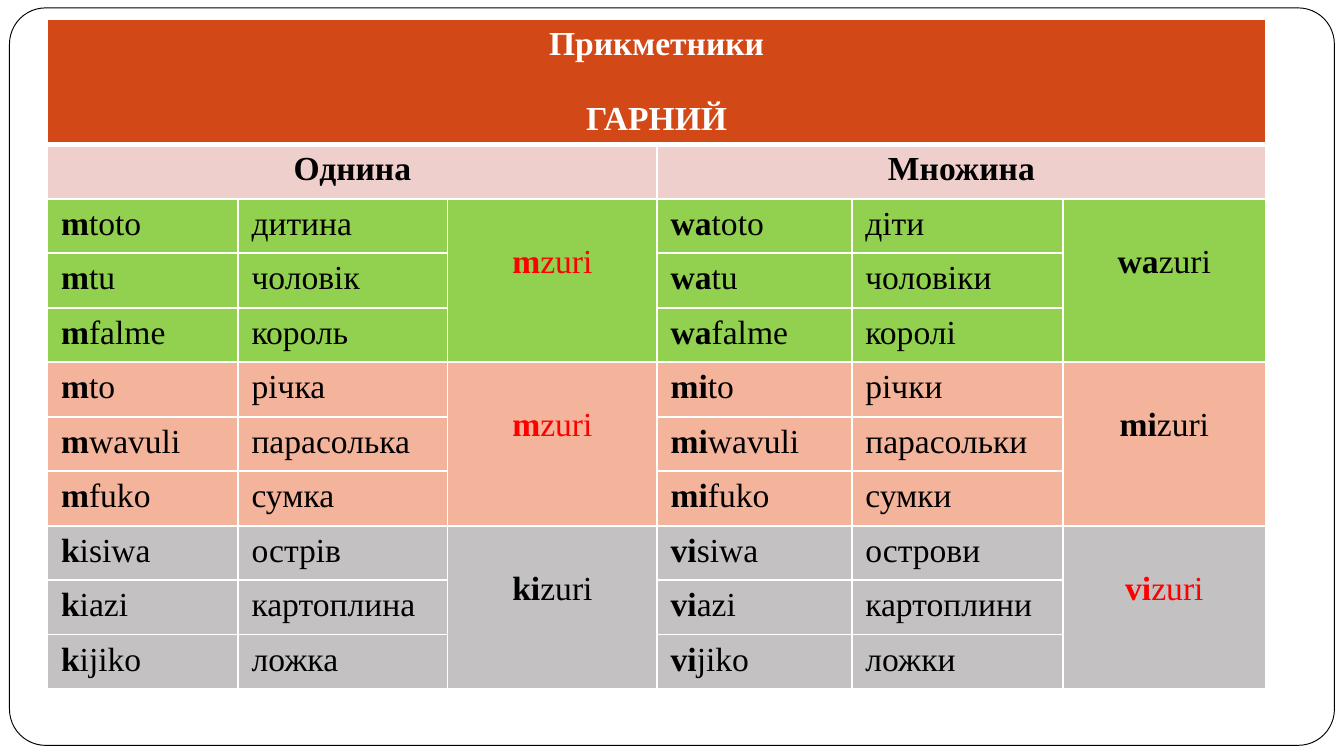
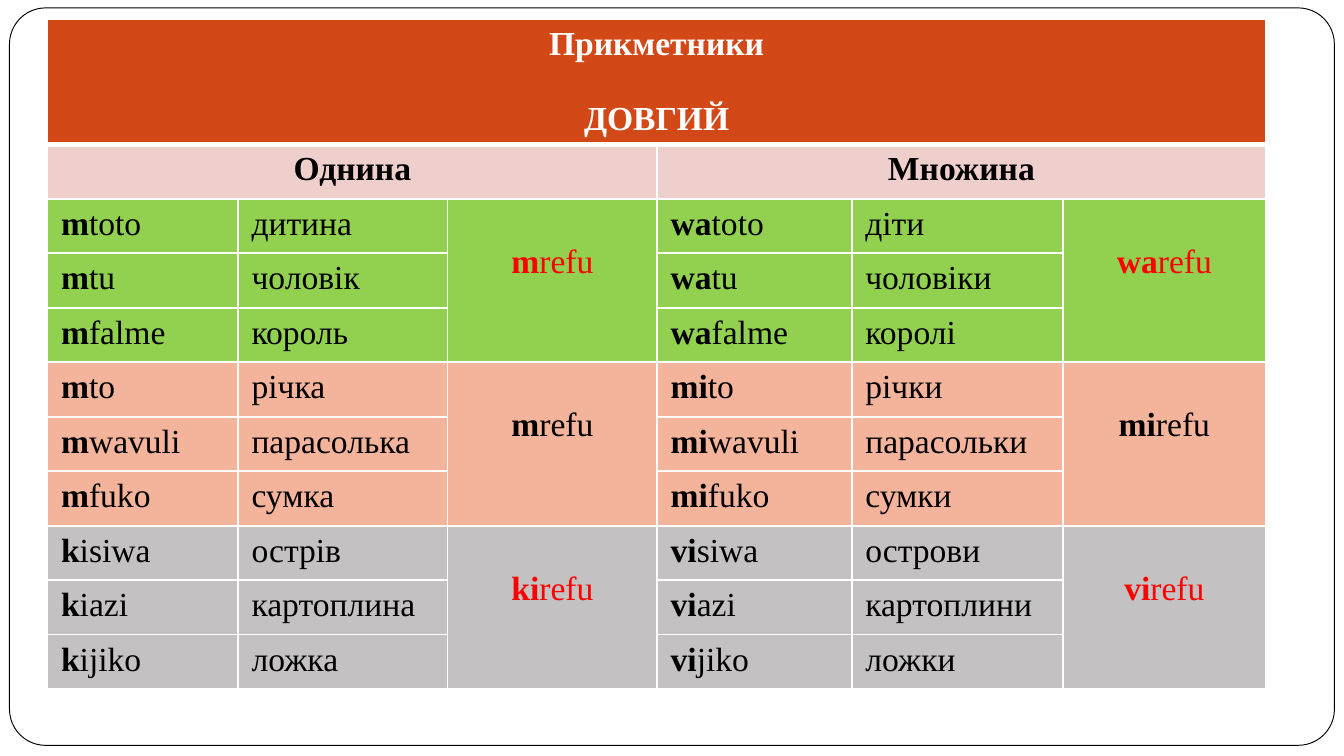
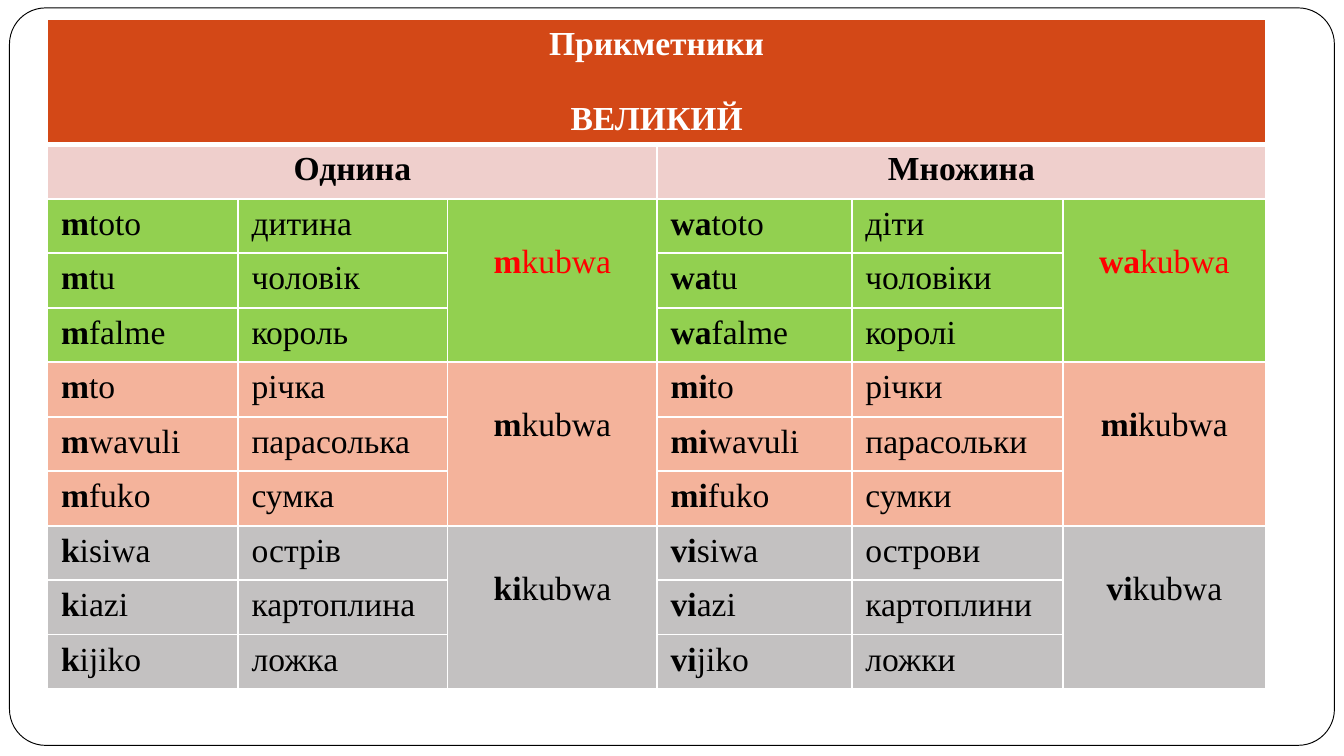
from lxml import etree
from pptx import Presentation
from pptx.dml.color import RGBColor
from pptx.enum.shapes import MSO_SHAPE
from pptx.enum.text import PP_ALIGN
from pptx.oxml.ns import qn
from pptx.util import Cm, Pt

FONT = "Times New Roman"
WHITE, BLACK, RED = "FFFFFF", "000000", "FF0000"
HEADING_FILL, NUMBER_FILL = "D34817", "EFCFCC"
COLUMN_WIDTHS = (3.6, 3.96, 3.96, 3.68, 3.99, 3.83)
ROW_HEIGHT = 1.03

# Noun classes: adjective prefixes, fill, and nouns with "|" after the prefix
NOUN_CLASSES = (
    (("m", "wa"), "92D050", (
        ("m|toto", "дитина", "wa|toto", "діти"),
        ("m|tu", "чоловік", "wa|tu", "чоловіки"),
        ("m|falme", "король", "wa|falme", "королі"),
    )),
    (("m", "mi"), "F4B39B", (
        ("m|to", "річка", "mi|to", "річки"),
        ("m|wavuli", "парасолька", "mi|wavuli", "парасольки"),
        ("m|fuko", "сумка", "mi|fuko", "сумки"),
    )),
    (("k" "i", "vi"), "C3C1C1", (
        ("k|isiwa", "острів", "vi|siwa", "острови"),
        ("k|iazi", "картоплина", "vi|azi", "картоплини"),
        ("k|ijiko", "ложка", "vi|jiko", "ложки"),
    )),
)

# Adjective, its stem, and the (class, number) forms shown in red
ADJECTIVES = (
    ("ГАРНИЙ", "zuri", {(0, 0), (1, 0), (2, 1)}),
    ("ДОВГИЙ", "refu", {(0, 0), (0, 1), (2, 0), (2, 1)}),
    ("ВЕЛИКИЙ", "kubwa", {(0, 0), (0, 1)}),
)


def rgb(hex_code):
    return RGBColor.from_string(hex_code)


def style_run(run, color, bold):
    run.font.name = FONT
    run.font.size = Pt(18)
    run.font.bold = bold
    run.font.color.rgb = rgb(color)


def write_heading(cell, text, color):
    """Bold centred lines, one empty line's height apart."""
    cell.text_frame.text = text
    for position, paragraph in enumerate(cell.text_frame.paragraphs):
        paragraph.alignment = PP_ALIGN.CENTER
        paragraph.space_before = Pt(20 if position else 0)
        for run in paragraph.runs:
            style_run(run, color, True)


def write_word(cell, word, color=BLACK):
    """A word whose prefix, marked off by "|", is bold."""
    prefix, _, stem = word.rpartition("|")
    paragraph = cell.text_frame.paragraphs[0]
    for part, bold in ((prefix, True), (stem, False)):
        if part:
            run = paragraph.add_run()
            run.text = part
            style_run(run, color, bold)


def write_adjective(cell, word, color):
    write_word(cell, word, color)
    cell.text_frame.paragraphs[0].alignment = PP_ALIGN.CENTER
    cell.margin_top = Cm(0.84)


def set_borders(cell, top=1, bottom=1):
    properties = cell._tc.get_or_add_tcPr()
    widths = (("lnL", 1), ("lnR", 1), ("lnT", top), ("lnB", bottom))
    for position, (side, width) in enumerate(widths):
        border = etree.Element(qn(f"a:{side}"), w=str(Pt(width)))
        fill = etree.SubElement(border, qn("a:solidFill"))
        etree.SubElement(fill, qn("a:srgbClr"), val=WHITE)
        properties.insert(position, border)


def fill_row(table, row, color, top=1, bottom=1):
    for column in range(len(COLUMN_WIDTHS)):
        cell = table.cell(row, column)
        cell.fill.solid()
        cell.fill.fore_color.rgb = rgb(color)
        set_borders(cell, top, bottom)


def add_frame(slide):
    frame = slide.shapes.add_shape(
        MSO_SHAPE.ROUNDED_RECTANGLE, Cm(0.18), Cm(0.15), Cm(25.04), Cm(13.94))
    frame.adjustments[0] = 0.049
    frame.shadow.inherit = False
    frame.fill.solid()
    frame.fill.fore_color.rgb = rgb(WHITE)
    frame.line.color.rgb = rgb(BLACK)
    frame.line.width = Pt(0.5)


def add_grid(slide):
    row_count = 2 + sum(len(nouns) for _, _, nouns in NOUN_CLASSES)
    holder = slide.shapes.add_table(
        row_count, len(COLUMN_WIDTHS), Cm(0.9), Cm(0.36),
        Cm(sum(COLUMN_WIDTHS)), Cm(ROW_HEIGHT * row_count))
    table = holder.table
    table.horz_banding = False
    for column, width in zip(table.columns, COLUMN_WIDTHS):
        column.width = Cm(width)
    for row in table.rows:
        row.height = Cm(ROW_HEIGHT)
    holder.height = Cm(12.85)
    return table


def add_adjective_table(slide, adjective, stem, red_forms):
    table = add_grid(slide)

    # Heading and grammatical numbers
    fill_row(table, 0, HEADING_FILL, bottom=3)
    fill_row(table, 1, NUMBER_FILL, top=3)
    table.cell(0, 0).merge(table.cell(0, 5))
    write_heading(table.cell(0, 0), f"Прикметники\n{adjective}", WHITE)
    for column, number in ((0, "Однина"), (3, "Множина")):
        table.cell(1, column).merge(table.cell(1, column + 2))
        write_heading(table.cell(1, column), number, BLACK)

    # Nouns of each class beside the agreeing adjective
    first_row = 2
    for class_index, (prefixes, color, nouns) in enumerate(NOUN_CLASSES):
        for row, words in enumerate(nouns, first_row):
            fill_row(table, row, color)
            for column, word in zip((0, 1, 3, 4), words):
                write_word(table.cell(row, column), word)
        last_row = first_row + len(nouns) - 1
        for number, prefix in enumerate(prefixes):
            column = 2 + 3 * number
            agreeing = table.cell(first_row, column)
            agreeing.merge(table.cell(last_row, column))
            form_color = RED if (class_index, number) in red_forms else BLACK
            write_adjective(agreeing, f"{prefix}|{stem}", form_color)
        first_row = last_row + 1


def main():
    deck = Presentation()
    deck.slide_width, deck.slide_height = Cm(25.4), Cm(14.29)
    blank_layout = deck.slide_layouts[6]
    for adjective, stem, red_forms in ADJECTIVES:
        slide = deck.slides.add_slide(blank_layout)
        add_frame(slide)
        add_adjective_table(slide, adjective, stem, red_forms)
    deck.save("out.pptx")


if __name__ == "__main__":
    main()
